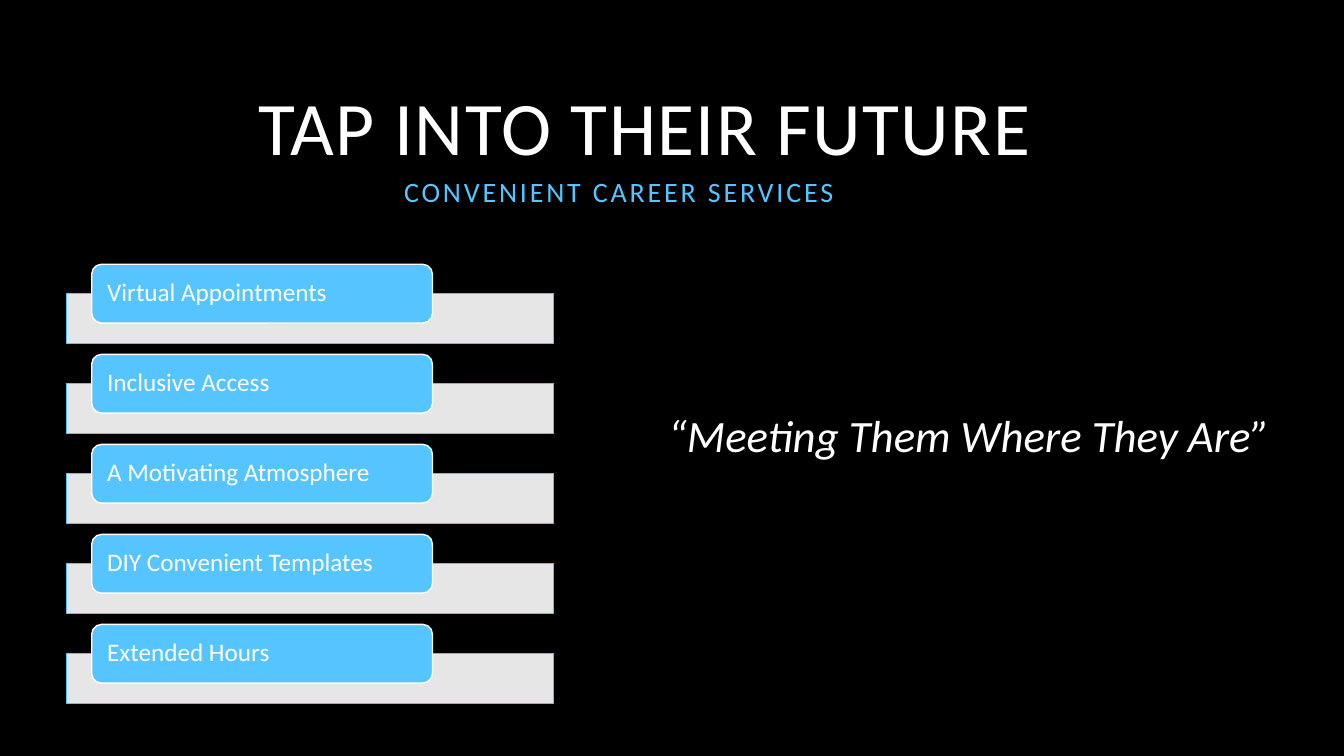
import pptx
import pptx.util
import pptx.dml.color
import pptx.enum.shapes
import pptx.enum.text
import pptx.oxml.ns
import lxml.etree

Pt = pptx.util.Pt
RGB = pptx.dml.color.RGBColor.from_string
ALIGN = pptx.enum.text.PP_ALIGN
ANCHOR = pptx.enum.text.MSO_ANCHOR
SHAPE = pptx.enum.shapes.MSO_SHAPE
COLORS = {"background": "000000", "white": "FFFFFF", "sky": "56C5FF"}


def write(shape, text, size, color="white", align=ALIGN.LEFT, anchor=ANCHOR.MIDDLE,
          line_spacing=0.9, letter_spacing=0, italic=False, inset=(7.2, 3.6)):
    frame = shape.text_frame
    frame.word_wrap = True
    frame.auto_size = pptx.enum.text.MSO_AUTO_SIZE.NONE
    frame.vertical_anchor = anchor
    frame.margin_left = frame.margin_right = Pt(inset[0])
    frame.margin_top = frame.margin_bottom = Pt(inset[1])
    paragraph = frame.paragraphs[0]
    paragraph.alignment = align
    paragraph.line_spacing = line_spacing
    run = paragraph.add_run()
    run.text = text
    run.font.name = "Calibri"
    run.font.size = Pt(size)
    run.font.italic = italic
    run.font.color.rgb = RGB(COLORS[color])
    if letter_spacing:
        run._r.get_or_add_rPr().set("spc", str(letter_spacing * 100))


def add_block(kind, left, top, width, height, fill, line):
    block = slide.shapes.add_shape(kind, Pt(left), Pt(top), Pt(width), Pt(height))
    block.shadow.inherit = False
    block.fill.solid()
    block.fill.fore_color.rgb = RGB(COLORS[fill])
    block.line.color.rgb = RGB(COLORS[line])
    block.line.width = Pt(1)
    return block


deck = pptx.Presentation()
deck.slide_width = Pt(960)
deck.slide_height = Pt(540)
slide = deck.slides.add_slide(deck.slide_layouts[5])
slide.background.fill.solid()
slide.background.fill.fore_color.rgb = RGB(COLORS["background"])

title = slide.shapes.title
title.left, title.top, title.width, title.height = Pt(107.3), Pt(18), Pt(720), Pt(108)
write(title, "TAP INTO THEIR FUTURE ", 54, align=ALIGN.CENTER,
      anchor=ANCHOR.BOTTOM, letter_spacing=1)

subtitle = slide.shapes.add_textbox(Pt(281.5), Pt(108), Pt(348), Pt(60))
write(subtitle, "CONVENIENT CAREER SERVICES", 20, color="sky", letter_spacing=2)

services = ["Virtual Appointments", "Inclusive Access", "A Motivating Atmosphere",
            "DIY Convenient Templates", "Extended Hours"]
for row, service in enumerate(services):
    top = 188.8 + row * 64.3
    bar = add_block(SHAPE.RECTANGLE, 47.5, top + 20.7, 348, 36, "white", "sky")
    bar_color = bar.fill._xPr.find(".//" + pptx.oxml.ns.qn("a:srgbClr"))
    lxml.etree.SubElement(bar_color, pptx.oxml.ns.qn("a:alpha"), val="90000")
    label = add_block(SHAPE.ROUNDED_RECTANGLE, 65.5, top, 243.4, 42, "sky", "white")
    write(label, service, 18, inset=(9, 0))

quote = slide.shapes.add_textbox(Pt(467.3), Pt(288), Pt(450), Pt(46))
write(quote, "“Meeting Them Where They Are”", 32, align=ALIGN.CENTER,
      anchor=ANCHOR.TOP, line_spacing=1.0, italic=True)

deck.save("out.pptx")
